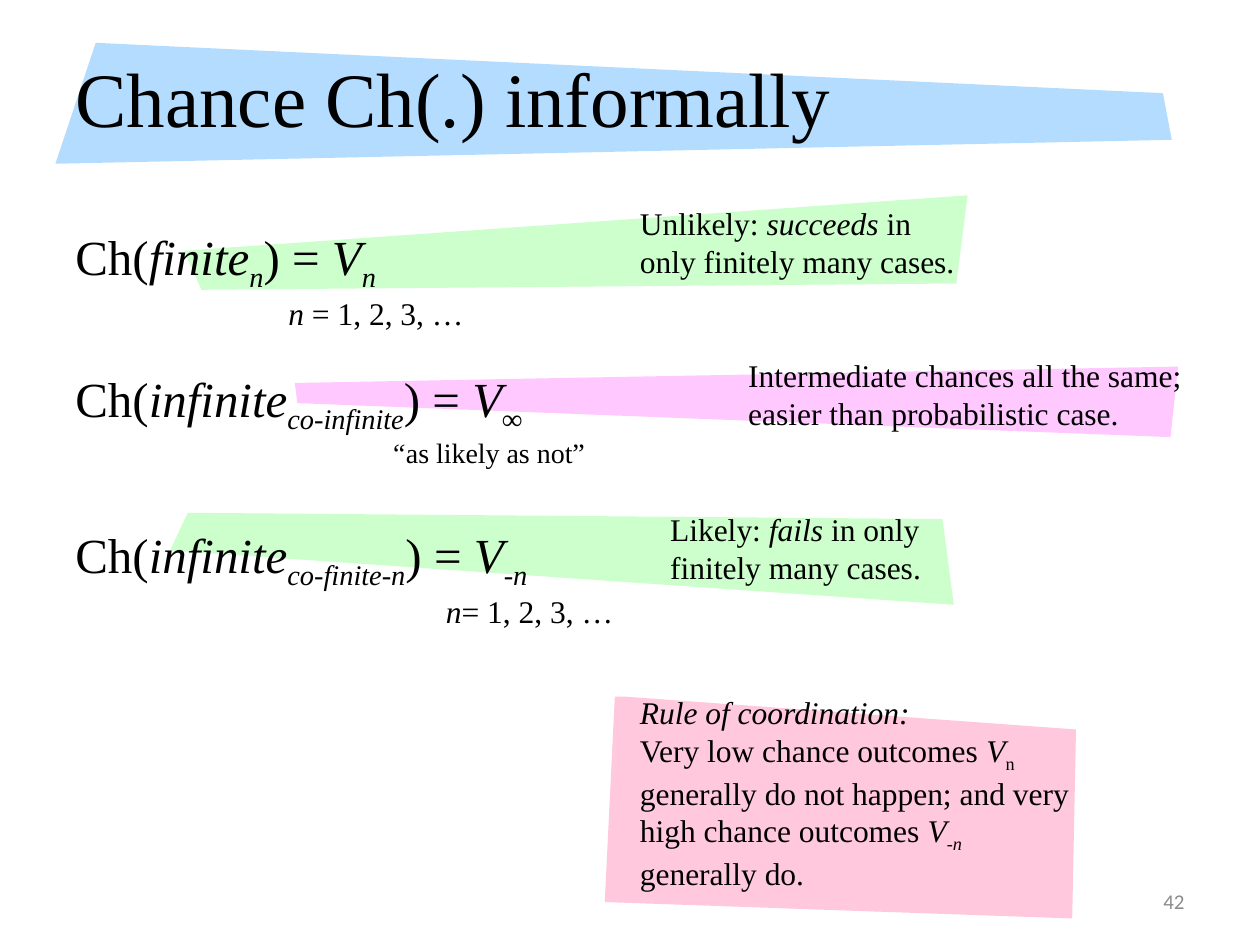
"""Build the slide on informal chance values with its shaded notes."""
from dataclasses import dataclass
from typing import NamedTuple

from pptx import Presentation
from pptx.dml.color import RGBColor as Rgb
from pptx.enum.text import MSO_ANCHOR as Anchor, MSO_AUTO_SIZE as Auto, PP_ALIGN as Align
from pptx.util import Pt

PX = 9144
SERIF = "Times New Roman"
HUES = {
    "ink": "000000",
    "gray": "8C8C8C",
    "blue": "B4DCFF",
    "green": "CCFFCC",
    "mauve": "FFC8FF",
    "pink": "FFC8DC",
}


class Box(NamedTuple):
    left: int
    top: int
    width: int
    height: int


class Run(NamedTuple):
    text: str
    slant: bool = False
    sub: bool = False


@dataclass
class Note:
    hue: str
    points: list[tuple[int, int]]
    box: Box
    paras: list[list[Run]]


@dataclass
class Rule:
    name: str
    index: str
    value: str
    label: list[Run]
    size: int
    indent: int
    gap: int


NOTES = [
    Note("mauve", [(234, 304), (935, 291), (929, 347), (236, 320)],
         Box(584, 278, 377, 71),
         [[Run("Intermediate chances all the same; easier than probabilistic case.")]]),
    Note("green", [(135, 437), (757, 480), (748, 412), (149, 407)],
         Box(522, 400, 285, 71),
         [[Run("Likely: "), Run("fails ", True), Run("in only finitely many cases.")]]),
    Note("green", [(146, 199), (768, 155), (759, 225), (160, 230)],
         Box(498, 157, 285, 71),
         [[Run("Unlikely: "), Run("succeeds", True), Run(" in only finitely many cases.")]]),
    Note("pink", [(488, 553), (497, 553), (854, 579), (851, 729), (480, 716)],
         Box(498, 545, 362, 162),
         [[Run("Rule of coordination:", True)],
          [Run("Very low chance outcomes "), Run("V", True), Run("n ", sub=True),
           Run("generally do not happen; and very high chance outcomes "),
           Run("V", True), Run("-n ", True, True), Run("generally do.")]]),
]
RULES = [
    Rule("finite", "n", "n", [Run("n ", True), Run("= 1, 2, 3, …")], 18, 169, 0),
    Rule("infinite", "co-infinite", "∞",
         [Run("“", True), Run("as likely as not”")], 16, 250, 21),
    Rule("infinite", "co-finite-n", "-n",
         [Run("n", True), Run("= 1, 2, 3, …")], 18, 294, 32),
]
TITLE = Box(50, 30, 837, 94)
BAND = [(76, 34), (923, 74), (930, 111), (44, 130)]


def place(shape, box: Box) -> None:
    """Move and size a shape."""
    shape.left, shape.top, shape.width, shape.height = (n * PX for n in box)


def write(para, runs: list[Run], size: int, hue: str = "ink", face: str = SERIF) -> None:
    """Add formatted runs to a paragraph."""
    for item in runs:
        run = para.add_run()
        run.text = item.text
        font = run.font
        font.name, font.size, font.italic = face, Pt(size), item.slant
        font.color.rgb = Rgb.from_string(HUES[hue])
        if item.sub:
            run._r.get_or_add_rPr().set("baseline", "-25000")


def shade(shapes, points: list[tuple[int, int]], hue: str) -> None:
    """Draw a filled outline."""
    pen = shapes.build_freeform(*points[0], scale=PX)
    pen.add_line_segments(points[1:], close=True)
    form = pen.convert_to_shape()
    form.shadow.inherit = False
    form.fill.solid()
    form.fill.fore_color.rgb = Rgb.from_string(HUES[hue])
    form.line.fill.background()


def add_text(shapes, box: Box, wrap: bool = True):
    """Add a text box and return its frame."""
    frame = shapes.add_textbox(*(n * PX for n in box)).text_frame
    frame.word_wrap = wrap
    return frame


def add_note(shapes, note: Note) -> None:
    """Group a shaded outline with its text."""
    group = shapes.add_group_shape().shapes
    shade(group, note.points, note.hue)
    frame = add_text(group, note.box)
    frame.auto_size = Auto.SHAPE_TO_FIT_TEXT
    for i, runs in enumerate(note.paras):
        write(frame.add_paragraph() if i else frame.paragraphs[0], runs, 18)


def add_rule(para, rule: Rule) -> None:
    """Write a chance formula with its label below."""
    props = para._p.get_or_add_pPr()
    props.set("marL", str(rule.indent * PX))
    props.set("indent", str(-rule.indent * PX))
    para.space_before = Pt(rule.gap)
    write(para, [Run("Ch("), Run(rule.name, True), Run(rule.index, True, True),
                 Run(") = "), Run("V", True), Run(rule.value, True, True)], 28)
    para.add_line_break()
    write(para, rule.label, rule.size)


def main() -> None:
    """Build and save the slide."""
    deck = Presentation()
    deck.slide_width, deck.slide_height = 1000 * PX, 750 * PX
    slide = deck.slides.add_slide(deck.slide_layouts[5])
    shapes = slide.shapes

    for note in NOTES[:3]:
        add_note(shapes, note)

    shade(shapes, BAND, "blue")
    title = shapes.title
    place(title, TITLE)
    shapes._spTree.append(title._element)
    frame = title.text_frame
    frame.auto_size = Auto.NONE
    frame.vertical_anchor = Anchor.MIDDLE
    frame.paragraphs[0].alignment = Align.LEFT
    write(frame.paragraphs[0], [Run("Chance Ch(.) informally")], 44)

    frame = add_text(shapes, Box(717, 695, 233, 40))
    frame.vertical_anchor = Anchor.MIDDLE
    frame.paragraphs[0].alignment = Align.RIGHT
    write(frame.paragraphs[0], [Run("42")], 12, "gray", "Calibri")

    add_note(shapes, NOTES[3])

    frame = add_text(shapes, Box(50, 175, 451, 348), False)
    frame.auto_size = Auto.SHAPE_TO_FIT_TEXT
    for i, rule in enumerate(RULES):
        add_rule(frame.add_paragraph() if i else frame.paragraphs[0], rule)

    deck.save("out.pptx")


if __name__ == "__main__":
    main()
